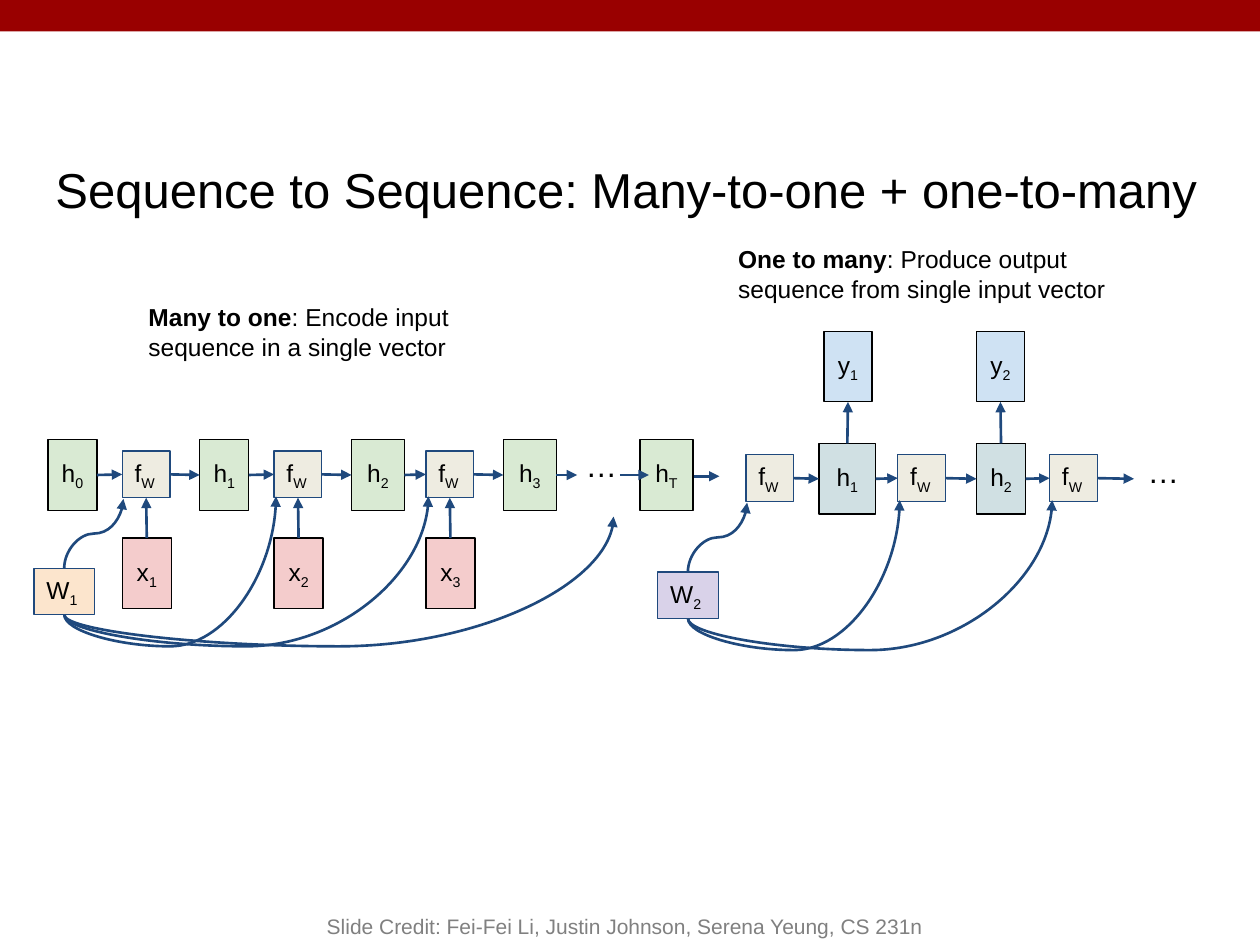
import pptx
import pptx.dml.color
import pptx.enum.shapes
import pptx.enum.text
import pptx.oxml
import pptx.oxml.ns
import pptx.util
from pptx.util import Inches

FONT = "Arial"
BLACK, NAVY, GREY, RED = "000000", "1F497D", "808080", "990000"
GREEN, TEAL, BLUE, PINK = "D9EAD3", "D0E0E3", "CFE2F3", "F4CCCC"
BEIGE, ORANGE, PURPLE = "EEECE1", "FCE5CD", "D9D2E9"
TOP, LEFT, BOTTOM, RIGHT = range(4)
STEP = 1.205  # distance from one time step to the next
CELL_HEIGHT, FUNCTION_HEIGHT = 0.56, 0.37
CENTER = pptx.enum.text.PP_ALIGN.CENTER
MIDDLE = pptx.enum.text.MSO_ANCHOR.MIDDLE


def color(hex_string):
    return pptx.dml.color.RGBColor.from_string(hex_string)


def set_frame(frame, anchor, inset=0.1):
    frame.word_wrap = True
    frame.auto_size = pptx.enum.text.MSO_AUTO_SIZE.NONE
    frame.vertical_anchor = anchor
    frame.margin_left = frame.margin_right = Inches(inset)
    frame.margin_top = frame.margin_bottom = Inches(inset)


def add_run(paragraph, text, size, bold=False, text_color=BLACK):
    run = paragraph.add_run()
    run.text = text
    run.font.name = FONT
    run.font.size = pptx.util.Pt(size)
    run.font.bold = bold
    run.font.color.rgb = color(text_color)
    return run


def add_rectangle(slide, left, top, width, height, fill):
    shape = slide.shapes.add_shape(
        pptx.enum.shapes.MSO_SHAPE.RECTANGLE,
        Inches(left), Inches(top), Inches(width), Inches(height))
    shape.shadow.inherit = False
    shape.fill.solid()
    shape.fill.fore_color.rgb = color(fill)
    shape.line.fill.background()
    return shape


def add_node(slide, left, top, width, height, fill, letter, subscript,
             outline=BLACK, alignment=CENTER):
    shape = add_rectangle(slide, left, top, width, height, fill)
    shape.line.color.rgb = color(outline)
    shape.line.width = pptx.util.Pt(0.75)
    set_frame(shape.text_frame, MIDDLE)
    paragraph = shape.text_frame.paragraphs[0]
    paragraph.alignment = alignment
    add_run(paragraph, letter, 14)
    run = add_run(paragraph, subscript, 14)
    run.font._element.set("baseline", "-25000")
    return shape


def add_cell(slide, left, top, width, fill, letter, subscript):
    return add_node(slide, left, top, width, CELL_HEIGHT, fill, letter, subscript)


def add_function(slide, left, top):
    return add_node(slide, left, top, 0.38, FUNCTION_HEIGHT, BEIGE, "f", "W",
                    NAVY, pptx.enum.text.PP_ALIGN.LEFT)


def add_text(slide, left, top, width, height):
    box = slide.shapes.add_textbox(
        Inches(left), Inches(top), Inches(width), Inches(height))
    set_frame(box.text_frame, pptx.enum.text.MSO_ANCHOR.TOP)
    return box.text_frame


def add_caption(slide, left, top, heading, body):
    paragraph = add_text(slide, left, top, 3.23, 0.72).paragraphs[0]
    add_run(paragraph, heading, 14, bold=True)
    add_run(paragraph, body, 14)


def add_ellipsis(slide, left, top):
    add_run(add_text(slide, left, top, 0.62, 0.66).paragraphs[0], "…", 18)


def add_arrow(slide, start, end, kind=pptx.enum.shapes.MSO_CONNECTOR.STRAIGHT):
    arrow = slide.shapes.add_connector(
        kind, Inches(start[0]), Inches(start[1]), Inches(end[0]), Inches(end[1]))
    arrow.line.color.rgb = color(NAVY)
    arrow.line.width = pptx.util.Pt(1.5)
    head = pptx.oxml.parse_xml(
        f'<a:tailEnd {pptx.oxml.ns.nsdecls("a")} type="triangle"/>')
    arrow.line._get_or_add_ln().append(head)
    arrow._element.spPr.append(
        pptx.oxml.parse_xml(f'<a:effectLst {pptx.oxml.ns.nsdecls("a")}/>'))
    return arrow


def join(slide, source, source_side, target, target_side):
    arrow = add_arrow(slide, (0, 0), (1, 1))
    arrow.begin_connect(source, source_side)
    arrow.end_connect(target, target_side)


def leave_right(slide, source, end):
    add_arrow(slide, (0, 0), end).begin_connect(source, RIGHT)


def add_curve(slide, start, end, bend):
    """Curve that leaves and arrives vertically: a quarter-turned connector."""
    curve = add_arrow(slide, start, end, pptx.enum.shapes.MSO_CONNECTOR.CURVE)
    width, height = abs(start[1] - end[1]), abs(end[0] - start[0])
    curve.left = Inches((start[0] + end[0] - width) / 2)
    curve.top = Inches((start[1] + end[1] - height) / 2)
    curve.width, curve.height = Inches(width), Inches(height)
    properties = curve._element.spPr
    for name, value in (("rot", "5400000"), ("flipH", "1"), ("flipV", "1")):
        properties.xfrm.set(name, value)
    guides = properties.find(".//" + pptx.oxml.ns.qn("a:avLst"))
    guides.append(pptx.oxml.parse_xml(
        f'<a:gd {pptx.oxml.ns.nsdecls("a")} name="adj1" '
        f'fmla="val {round(bend * 100000)}"/>'))


def add_weight(slide, left, top, fill, subscript, first_target, far_targets):
    """Shared weight box with one curve to every step that uses it."""
    add_node(slide, left, top, 0.48, 0.37, fill, "W", subscript,
             NAVY, pptx.enum.text.PP_ALIGN.LEFT)
    center, bottom = left + 0.24, top + 0.37
    add_curve(slide, (center, top), first_target, 0.5)
    for target in far_targets:
        add_curve(slide, (center, bottom), target, -0.25 / (bottom - target[1]))


def add_encoder(slide):
    state_widths = (0.39, 0.39, 0.42, 0.42)
    states = [add_cell(slide, 0.38 + STEP * i, 3.49, width, GREEN, "h", str(i))
              for i, width in enumerate(state_widths)]
    for i in range(3):
        left = 0.97 + STEP * i
        function = add_function(slide, left, 3.58)
        word = add_cell(slide, left, 4.27, 0.39, PINK, "x", str(i + 1))
        join(slide, word, TOP, function, BOTTOM)
        join(slide, states[i], RIGHT, function, LEFT)
        join(slide, function, RIGHT, states[i + 1], LEFT)
    leave_right(slide, states[-1], (4.58, 3.77))
    add_ellipsis(slide, 4.55, 3.44)
    add_weight(slide, 0.27, 4.51, ORANGE, "1", (0.98, 3.96),
               [(2.19, 3.94), (3.4, 3.94), (4.87, 4.1)])
    # Final state, handed over to the decoder
    add_arrow(slide, (5.48, 3.78), (5.71, 3.78))
    add_cell(slide, 5.08, 3.49, 0.42, GREEN, "h", "T")
    add_arrow(slide, (4.92, 3.77), (5.15, 3.77))


def add_decoder(slide):
    functions = [add_function(slide, 5.92 + STEP * i, 3.61) for i in range(3)]
    for i, (left, width, output_left) in enumerate(
            ((6.5, 0.45, 6.54), (7.75, 0.39, 7.75))):
        state = add_cell(slide, left, 3.52, width, TEAL, "h", str(i + 1))
        output = add_cell(slide, output_left, 2.63, 0.38, BLUE, "y", str(i + 1))
        join(slide, state, TOP, output, BOTTOM)
        join(slide, functions[i], RIGHT, state, LEFT)
        join(slide, state, RIGHT, functions[i + 1], LEFT)
    leave_right(slide, functions[-1], (9, 3.8))
    add_ellipsis(slide, 9.01, 3.49)
    add_weight(slide, 5.22, 4.54, PURPLE, "2", (5.93, 3.99),
               [(7.14, 3.97), (8.35, 3.97)])


def add_title(slide, text):
    title = slide.shapes.title
    title.left, title.top = Inches(0.34), Inches(1.03)
    title.width, title.height = Inches(9.29), Inches(0.94)
    set_frame(title.text_frame, MIDDLE)
    paragraph = title.text_frame.paragraphs[0]
    paragraph.alignment = pptx.enum.text.PP_ALIGN.LEFT
    add_run(paragraph, text, 28)


def add_credit(slide, text):
    frame = add_text(slide, 2, 7, 5.92, 0.5)
    set_frame(frame, pptx.enum.text.MSO_ANCHOR.BOTTOM, 0.05)
    frame.paragraphs[0].alignment = CENTER
    add_run(frame.paragraphs[0], text, 12, text_color=GREY)


def main():
    presentation = pptx.Presentation()
    presentation.slide_width, presentation.slide_height = Inches(10), Inches(7.5)
    slide = presentation.slides.add_slide(presentation.slide_layouts[5])
    # Top band, title and captions
    add_rectangle(slide, 0, 0, 10, 0.25, RED)
    add_title(slide, "Sequence to Sequence: Many-to-one + one-to-many")
    add_caption(slide, 1.08, 2.3, "Many to one",
                ": Encode input sequence in a single vector")
    add_caption(slide, 5.76, 1.84, "One to many",
                ": Produce output sequence from single input vector")
    # Network diagram
    add_decoder(slide)
    add_encoder(slide)
    add_credit(slide, "Slide Credit: Fei-Fei Li, Justin Johnson, Serena Yeung, CS 231n")
    presentation.save("out.pptx")


if __name__ == "__main__":
    main()
